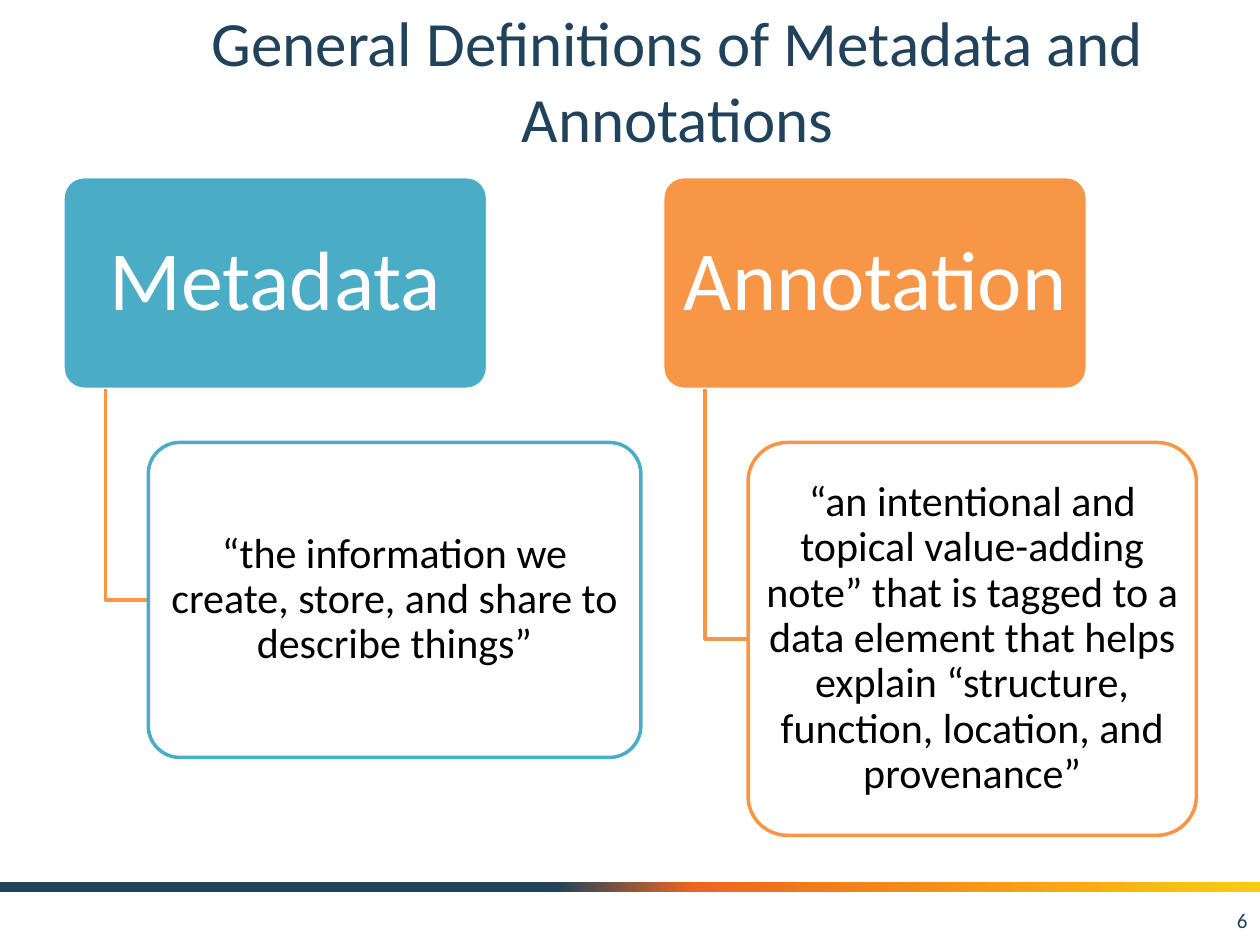
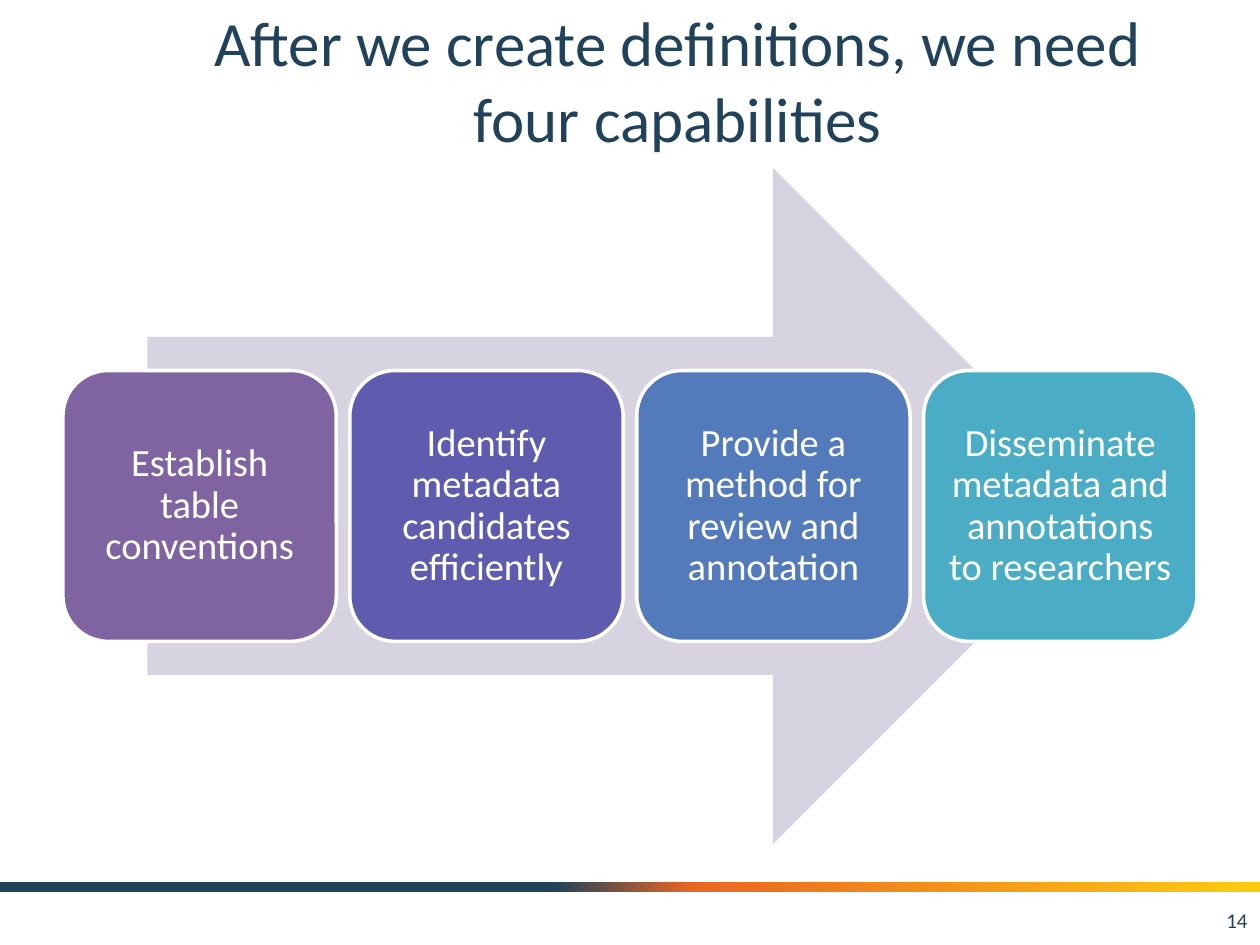
"""Build two slides on metadata, annotations and the capabilities they need."""
from copy import deepcopy
from dataclasses import dataclass

from pptx import Presentation
from pptx.dml.color import RGBColor
from pptx.enum import shapes as kinds, text as txt
from pptx.oxml.ns import qn
from pptx.util import Cm, Pt


@dataclass(frozen=True)
class Theme:
    """Colours, font and type sizes of the deck."""
    navy: str = "20425A"
    flame: str = "EB6622"
    gold: str = "FCCB10"
    teal: str = "4BACC6"
    orange: str = "F79646"
    purple: str = "8064A2"
    indigo: str = "5F5BAE"
    blue: str = "537ABA"
    lilac: str = "D8D3E0"
    white: str = "FFFFFF"
    black: str = "000000"
    font: str = "Calibri"
    title: int = 36
    head: int = 48
    body: int = 24
    step: int = 22
    page: int = 12
    line: int = 2


LOOK = Theme()
WIDE, HIGH = 25.4, 19.05
EDGE = 1.27
KIND = kinds.MSO_SHAPE
ALIGN = txt.PP_ALIGN

TERMS = {
    "title": "General Definitions of Metadata and Annotations",
    "page": "6",
    "items": [
        ("Metadata", "“the information we create, store, and share to describe things”",
         LOOK.teal, 9.93, 6.35),
        ("Annotation",
         "“an intentional and topical value-adding note” that is tagged to a data element "
         "that helps explain “structure, function, location, and provenance”",
         LOOK.orange, 9.04, 7.92),
    ],
}
STEPS = {
    "title": "After we create definitions, we need four capabilities",
    "page": "14",
    "items": [
        ("Establish table conventions", LOOK.purple),
        ("Identify metadata candidates efficiently", LOOK.indigo),
        ("Provide a method for review and annotation", LOOK.blue),
        ("Disseminate metadata and annotations to researchers", LOOK.teal),
    ],
}


def tint(hue):
    """Turn a hex string into a colour."""
    return RGBColor.from_string(hue)


def write(frame, words, size, hue, align=ALIGN.CENTER, pad=None, space=None):
    """Write one run into a text frame."""
    frame.word_wrap = True
    frame.auto_size = txt.MSO_AUTO_SIZE.NONE
    frame.vertical_anchor = txt.MSO_ANCHOR.MIDDLE
    if pad:
        frame.margin_left = frame.margin_right = Cm(pad[0])
        frame.margin_top = frame.margin_bottom = Cm(pad[1])
    para = frame.paragraphs[0]
    para.alignment = align
    if space:
        para.line_spacing = space
    run = para.add_run()
    run.text = words
    run.font.name = LOOK.font
    run.font.size = Pt(size)
    run.font.color.rgb = tint(hue)


def block(slide, kind, place, fill, edge=None, round_by=None):
    """Add a flat preset shape."""
    shape = slide.shapes.add_shape(kind, *map(Cm, place))
    shape.shadow.inherit = False
    shape.fill.solid()
    shape.fill.fore_color.rgb = tint(fill)
    outline(shape, edge)
    if round_by:
        shape.adjustments[0] = round_by
    return shape


def outline(shape, edge):
    """Draw the outline, or hide it when there is no colour."""
    if edge:
        shape.line.color.rgb = tint(edge)
        shape.line.width = Pt(LOOK.line)
    else:
        shape.line.fill.background()


def base(deck, data):
    """Add a slide with its band, title and page number."""
    slide = deck.slides.add_slide(deck.slide_layouts[5])
    band = block(slide, KIND.RECTANGLE, (0, 17.78, WIDE, 0.2), LOOK.navy)
    band.fill.gradient()
    band.fill.gradient_angle = 0
    stops = band.element.find(".//" + qn("a:gsLst"))
    stops.append(deepcopy(stops[0]))
    marks = [(0.44, LOOK.navy), (0.55, LOOK.flame), (1, LOOK.gold)]
    for stop, (spot, hue) in zip(band.fill.gradient_stops, marks):
        stop.position = spot
        stop.color.rgb = tint(hue)

    title = slide.shapes.title
    title.left, title.top, title.width, title.height = map(Cm, (3.18, 0.43, 20.96, 2.34))
    write(title.text_frame, data["title"], LOOK.title, LOOK.navy)
    page = slide.shapes.add_textbox(*map(Cm, (19.48, 18.03, 5.92, 1.02)))
    write(page.text_frame, data["page"], LOOK.page, LOOK.navy, ALIGN.RIGHT)
    return slide


def elbow(slide, left, top, right, low):
    """Draw a line that goes down and then right."""
    pen = slide.shapes.build_freeform(Cm(left), Cm(top))
    pen.add_line_segments([(Cm(left), Cm(low)), (Cm(right), Cm(low))], close=False)
    shape = pen.convert_to_shape()
    shape.shadow.inherit = False
    shape.fill.background()
    outline(shape, LOOK.orange)


def show_terms(deck):
    """Place each term above its meaning."""
    slide = base(deck, TERMS)
    left, top, wide, high = EDGE, 3.56, 8.56, 4.29
    note_top, shift, gap = 8.92, 1.72, 0.44
    for term, note, hue, note_wide, note_high in TERMS["items"]:
        head = block(slide, KIND.ROUNDED_RECTANGLE, (left, top, wide, high),
                     hue, LOOK.white, 0.1)
        write(head.text_frame, term, LOOK.head, LOOK.white, pad=(0.25, 0.18), space=0.9)
        note_left = left + shift
        elbow(slide, left + wide / 10, top + high, note_left, note_top + note_high / 2)
        card = block(slide, KIND.ROUNDED_RECTANGLE,
                     (note_left, note_top, note_wide, note_high), LOOK.white, hue, 0.1)
        write(card.text_frame, note, LOOK.body, LOOK.black, pad=(0.13, 0.08), space=0.9)
        left = note_left + note_wide + gap


def show_steps(deck):
    """Spread the steps evenly across an arrow."""
    slide = base(deck, STEPS)
    block(slide, KIND.RIGHT_ARROW, (2.97, 3.38, 19.43, 13.64), LOOK.lilac)
    items = STEPS["items"]
    wide = 5.51
    pitch = (WIDE - 2 * EDGE - wide) / (len(items) - 1)
    for nth, (words, hue) in enumerate(items):
        card = block(slide, KIND.ROUNDED_RECTANGLE,
                     (EDGE + nth * pitch, 7.47, wide, 5.46), hue, LOOK.white)
        write(card.text_frame, words, LOOK.step, LOOK.white, pad=(0.23, 0.23), space=0.9)


def main():
    """Build and save the deck."""
    deck = Presentation()
    deck.slide_width, deck.slide_height = Cm(WIDE), Cm(HIGH)
    show_terms(deck)
    show_steps(deck)
    deck.save("out.pptx")


if __name__ == "__main__":
    main()
